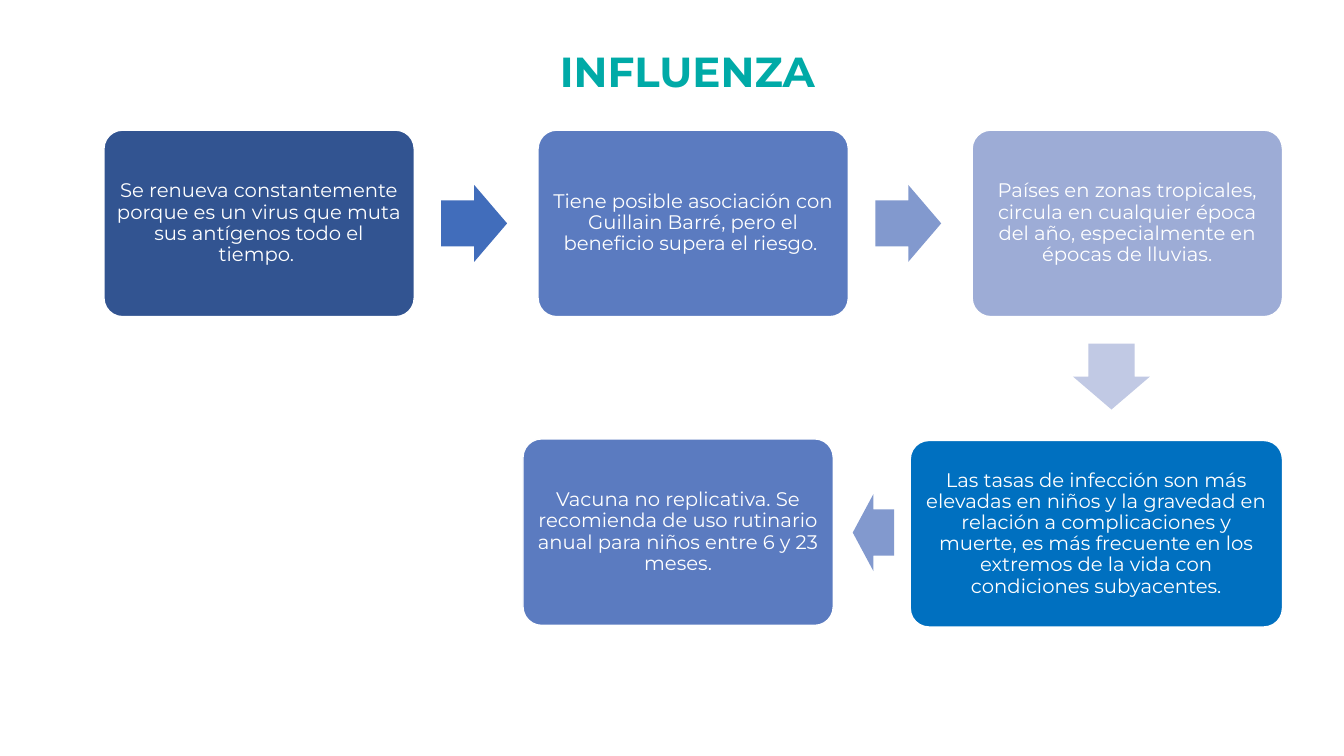
"""Build the influenza slide: a title and five steps joined by arrows."""
import pptx
import pptx.dml.color
import pptx.enum.shapes
import pptx.enum.text
import pptx.util

Cm = pptx.util.Cm
Pt = pptx.util.Pt
SHAPES = pptx.enum.shapes.MSO_SHAPE


def color(hex_value):
    return pptx.dml.color.RGBColor.from_string(hex_value)


def add_centered_text(shape, text, size, hex_value, bold=False):
    paragraph = shape.text_frame.paragraphs[0]
    paragraph.alignment = pptx.enum.text.PP_ALIGN.CENTER
    run = paragraph.add_run()
    run.text = text
    run.font.name = "Montserrat"
    run.font.size = Pt(size)
    run.font.bold = bold
    run.font.color.rgb = color(hex_value)
    return paragraph


presentation = pptx.Presentation()
presentation.slide_width = Cm(33.87)
presentation.slide_height = Cm(19.05)
slide = presentation.slides.add_slide(presentation.slide_layouts[6])

title = slide.shapes.add_textbox(Cm(9.17), Cm(1.02), Cm(16.61), Cm(1.55))
title.text_frame.word_wrap = True
add_centered_text(title, "INFLUENZA ", 30, "00AAA7", bold=True)

first_left, column_step, first_top = 2.62, 10.94, 3.28
step_width, step_height = 7.82, 4.7
steps = [
    (first_left, first_top, step_width, "325491",
     "Se renueva constantemente porque es un virus que muta sus antígenos todo el tiempo. "),
    (first_left + column_step, first_top, step_width, "5B7BC0",
     "Tiene posible asociación con Guillain Barré, pero el beneficio supera el riesgo. "),
    (first_left + 2 * column_step, first_top, step_width, "9DACD6",
     "Países en zonas tropicales, circula en cualquier época del año, "
     "especialmente en épocas de lluvias."),
    (22.94, 11.1, 9.38, "0070C0",
     "Las tasas de infección son más elevadas en niños y la gravedad en relación a "
     "complicaciones y muerte, es más frecuente en los extremos de la vida con "
     "condiciones subyacentes."),
    (13.18, 11.06, step_width, "5B7BC0",
     "Vacuna no replicativa. Se recomienda de uso rutinario anual para niños entre "
     "6 y 23 meses."),
]
for left, top, width, fill, text in steps:
    box = slide.shapes.add_shape(
        SHAPES.ROUNDED_RECTANGLE, Cm(left), Cm(top), Cm(width), Cm(step_height))
    box.adjustments[0] = 0.1
    box.shadow.inherit = False
    box.fill.solid()
    box.fill.fore_color.rgb = color(fill)
    box.line.color.rgb = color("FFFFFF")
    box.line.width = Pt(1)
    frame = box.text_frame
    frame.word_wrap = True
    frame.vertical_anchor = pptx.enum.text.MSO_ANCHOR.MIDDLE
    frame.margin_left = frame.margin_right = Cm(0.15)
    frame.margin_top = frame.margin_bottom = Cm(0.15)
    paragraph = add_centered_text(box, text, 14, "FFFFFF")
    paragraph.line_spacing = 0.9
    paragraph.space_after = Pt(4.9)

arrow_height = 1.94
arrows = [
    (11.12, 4.66, 1.66, 0, "416DBB"),
    (11.12 + column_step, 4.66, 1.66, 0, "8299CE"),
    (27.18, 8.52, 1.66, 90, "C1C9E4"),
    (21.49, 12.45, 1.04, 180, "8299CE"),
]
for left, top, width, rotation, fill in arrows:
    arrow = slide.shapes.add_shape(
        SHAPES.RIGHT_ARROW, Cm(left), Cm(top), Cm(width), Cm(arrow_height))
    arrow.adjustments[0] = 0.6
    arrow.adjustments[1] = 0.5
    arrow.rotation = rotation
    arrow.shadow.inherit = False
    arrow.fill.solid()
    arrow.fill.fore_color.rgb = color(fill)
    arrow.line.fill.background()

presentation.save("out.pptx")
